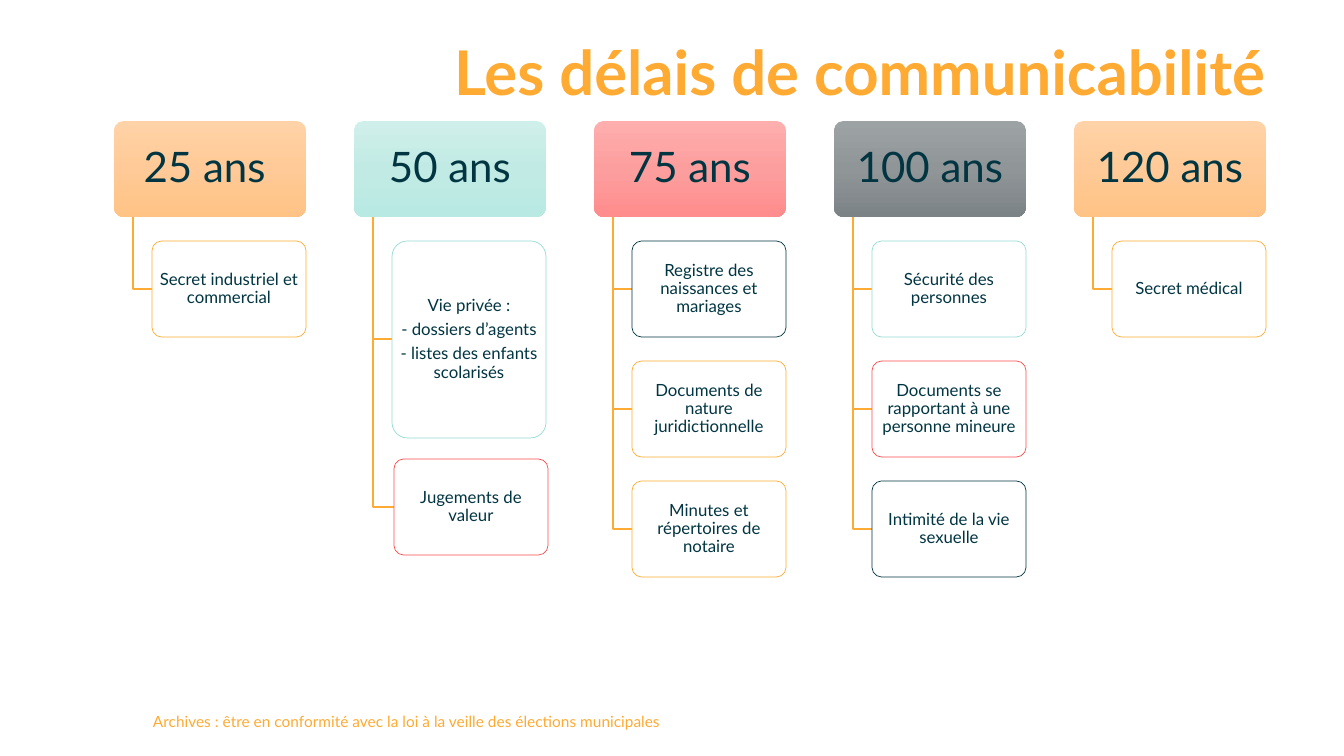
from copy import deepcopy
from dataclasses import dataclass

from lxml.etree import SubElement
from pptx import Presentation
from pptx.dml.color import RGBColor
from pptx.enum.shapes import MSO_SHAPE
from pptx.enum.text import MSO_ANCHOR, PP_ALIGN
from pptx.oxml.ns import qn
from pptx.util import Emu, Pt

EMU_PER_PX = 914400 / 100.8
FONT = "Lato"

ORANGE = RGBColor(0xFF, 0xAA, 0x32)
TURQUOISE = RGBColor(0x96, 0xDC, 0xD2)
RED = RGBColor(0xFA, 0x4B, 0x4B)
NAVY = RGBColor(0x00, 0x35, 0x41)
WHITE = RGBColor(0xFF, 0xFF, 0xFF)

ORANGE_SHADES = (RGBColor(0xFF, 0xD2, 0xA7), RGBColor(0xFF, 0xCA, 0x97), RGBColor(0xFF, 0xC3, 0x85))
TURQUOISE_SHADES = (RGBColor(0xCF, 0xEF, 0xEA), RGBColor(0xC2, 0xEA, 0xE4), RGBColor(0xB8, 0xE9, 0xE2))
RED_SHADES = (RGBColor(0xFF, 0xAE, 0xAE), RGBColor(0xFD, 0x9E, 0x9E), RGBColor(0xFF, 0x8D, 0x8D))
GREY_SHADES = (RGBColor(0x9D, 0xA2, 0xA5), RGBColor(0x90, 0x95, 0x98), RGBColor(0x7C, 0x83, 0x86))

COLUMN_LEFT, COLUMN_PITCH = 114, 240
HEADER_TOP, HEADER_WIDTH, BOX_HEIGHT = 121, 192, 96
CASE_TOP, CASE_PITCH, CASE_WIDTH, CASE_INDENT = 241, 120, 154, 38
TRUNK_INDENT = 19


@dataclass
class Case:
    text: str
    color: RGBColor
    height: int = BOX_HEIGHT
    shift_x: int = 0
    shift_y: int = 0


PERIODS = [
    ("25 ans ", ORANGE_SHADES, [Case("Secret industriel et commercial", ORANGE)]),
    ("50 ans", TURQUOISE_SHADES, [
        Case("Vie privée :\n- dossiers d’agents\n- listes des enfants scolarisés", TURQUOISE, height=197),
        Case("Jugements de valeur", RED, shift_x=2, shift_y=98),
    ]),
    ("75 ans", RED_SHADES, [
        Case("Registre des naissances et mariages", NAVY),
        Case("Documents de nature juridictionnelle", ORANGE),
        Case("Minutes et répertoires de notaire", ORANGE),
    ]),
    ("100 ans", GREY_SHADES, [
        Case("Sécurité des personnes", TURQUOISE),
        Case("Documents se rapportant à une personne mineure", RED),
        Case("Intimité de la vie sexuelle", NAVY),
    ]),
    ("120 ans", ORANGE_SHADES, [Case("Secret médical", ORANGE)]),
]


def px(length):
    return Emu(round(length * EMU_PER_PX))


def write_text(shape, text, *, size, color=NAVY, bold=False, align=PP_ALIGN.CENTER,
               line_spacing=0.9, space_after=0, inset_x=0, inset_y=0):
    frame = shape.text_frame
    frame.word_wrap = True
    frame.vertical_anchor = MSO_ANCHOR.MIDDLE
    frame.margin_left = frame.margin_right = px(inset_x)
    frame.margin_top = frame.margin_bottom = px(inset_y)
    frame.text = text
    for paragraph in frame.paragraphs:
        paragraph.alignment = align
        paragraph.line_spacing = line_spacing
        paragraph.space_after = Pt(space_after)
        for run in paragraph.runs:
            run.font.name = FONT
            run.font.size = Pt(size)
            run.font.bold = bold
            run.font.color.rgb = color


def add_text(slide, text, left, top, width, height, **text_format):
    box = slide.shapes.add_textbox(px(left), px(top), px(width), px(height))
    write_text(box, text, **text_format)


def add_rounded_box(slide, left, top, width, height):
    shape = slide.shapes.add_shape(
        MSO_SHAPE.ROUNDED_RECTANGLE, px(left), px(top), px(width), px(height))
    shape.adjustments[0] = 0.1
    shape.shadow.inherit = False
    return shape


def fill_gradient(shape, shades):
    """Fill from top to bottom with three evenly spaced shades."""
    shape.fill.gradient()
    shape.fill.gradient_angle = 270
    stop_list = shape.element.spPr.find(".//" + qn("a:gsLst"))
    stop_list.insert(1, deepcopy(stop_list[0]))
    for index, (stop, shade) in enumerate(zip(shape.fill.gradient_stops, shades)):
        stop.position = index / 2
        stop.color.rgb = shade


def add_header(slide, text, left, shades):
    header = add_rounded_box(slide, left, HEADER_TOP, HEADER_WIDTH, BOX_HEIGHT)
    fill_gradient(header, shades)
    header.line.fill.background()
    write_text(header, text, size=30, inset_x=6, inset_y=4)


def add_case(slide, case, left, top):
    box = add_rounded_box(slide, left, top, CASE_WIDTH, case.height)
    box.fill.solid()
    box.fill.fore_color.rgb = WHITE
    white = box.element.spPr.find(qn("a:solidFill"))[0]
    SubElement(white, qn("a:alpha"), val="90000")
    box.line.color.rgb = case.color
    box.line.width = Pt(0.5)
    write_text(box, case.text, size=12, space_after=4.2, inset_x=3, inset_y=2)


def add_branch(slide, trunk_x, case_x, case_y):
    """Draw the elbow line from the foot of a header to the side of a case."""
    builder = slide.shapes.build_freeform(trunk_x, HEADER_TOP + BOX_HEIGHT, scale=EMU_PER_PX)
    builder.add_line_segments([(trunk_x, case_y), (case_x, case_y)], close=False)
    branch = builder.convert_to_shape()
    branch.fill.background()
    branch.line.color.rgb = ORANGE
    branch.line.width = Pt(1)
    branch.shadow.inherit = False


def add_period(slide, left, title, shades, cases):
    add_header(slide, title, left, shades)
    for row, case in enumerate(cases):
        case_left = left + CASE_INDENT + case.shift_x
        case_top = CASE_TOP + row * CASE_PITCH + case.shift_y
        add_branch(slide, left + TRUNK_INDENT, case_left, case_top + case.height // 2)
        add_case(slide, case, case_left, case_top)


def main():
    presentation = Presentation()
    presentation.slide_width, presentation.slide_height = px(1344), px(756)
    slide = presentation.slides.add_slide(presentation.slide_layouts[6])

    add_text(slide, "Les délais de communicabilité", 103, 53, 1173, 46,
             size=44, color=ORANGE, bold=True, align=PP_ALIGN.RIGHT, inset_x=10, inset_y=5)
    add_text(slide, "Archives : être en conformité avec la loi à la veille des élections municipales",
             153, 701, 746, 40, size=11, color=ORANGE, align=PP_ALIGN.LEFT, line_spacing=1.0)
    for column, (title, shades, cases) in enumerate(PERIODS):
        add_period(slide, COLUMN_LEFT + column * COLUMN_PITCH, title, shades, cases)

    presentation.save("out.pptx")


if __name__ == "__main__":
    main()
